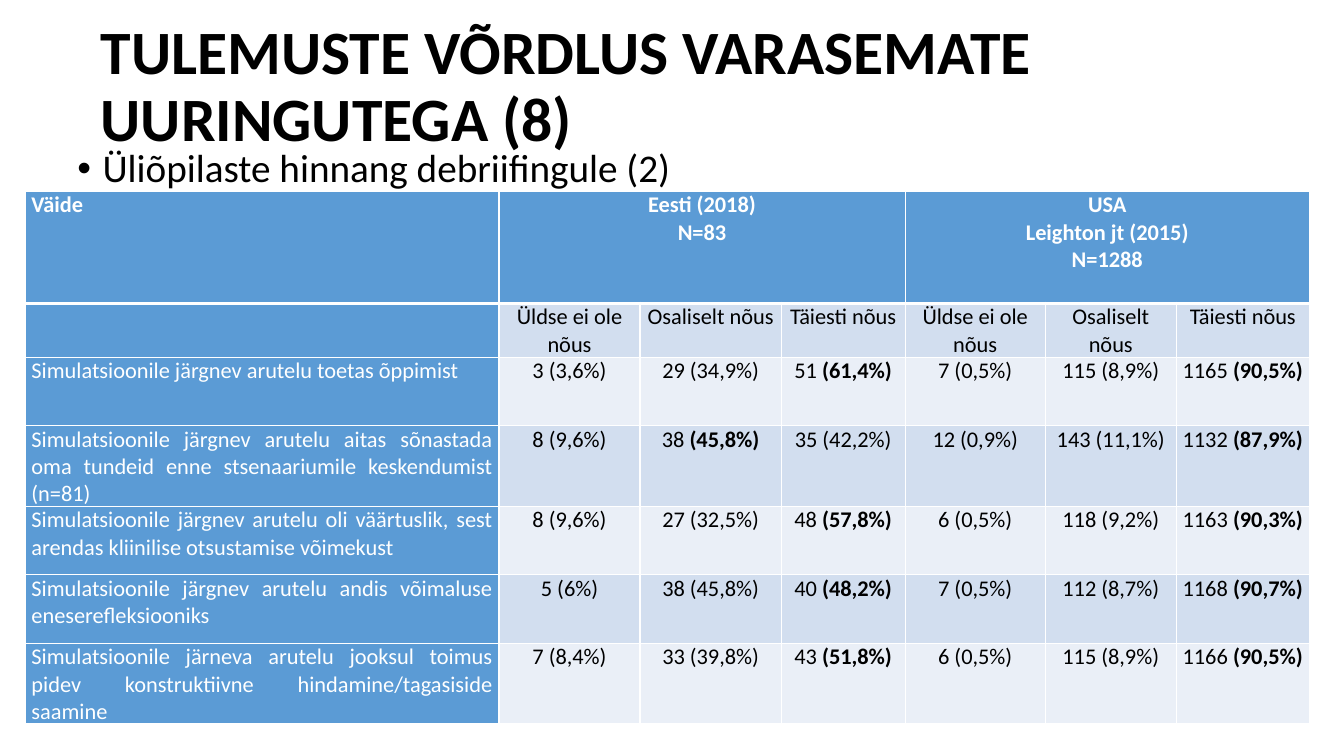
from lxml.etree import SubElement
from pptx import Presentation
from pptx.dml.color import RGBColor
from pptx.enum.text import MSO_ANCHOR, MSO_AUTO_SIZE, PP_ALIGN
from pptx.oxml.ns import qn
from pptx.util import Pt

COLORS = {"black": "000000", "white": "FFFFFF", "blue": "5B9BD5",
          "band": "D2DEEF", "pale": "EAEFF7"}
COLUMN_WIDTHS = [338.4, 100.8, 100.8, 88.56, 100.08, 93.6, 95.04]
ROW_HEIGHTS = [79.92, 32.4] + [48.96] * 5
GROUPS = {1: ["Eesti (2018)", "N=83"],
          4: ["USA", "Leighton jt (2015)", "N=1288"]}
ANSWERS = ["Üldse ei ole nõus", "Osaliselt nõus", "Täiesti nõus"]
STATEMENTS = [
    ["Simulatsioonile järgnev arutelu toetas õppimist",
     "3 (3,6%)", "29 (34,9%)", "51 |(61,4%)",
     "7 (0,5%)", "115 (8,9%)", "1165 |(90,5%)"],
    ["Simulatsioonile järgnev arutelu aitas sõnastada oma tundeid enne "
     "stsenaariumile keskendumist (n=81)",
     "8 (9,6%)", "38 |(45,8%)", "35 (42,2%)",
     "12 (0,9%)", "143 (11,1%)", "1132 |(87,9%)"],
    ["Simulatsioonile järgnev arutelu oli väärtuslik, sest arendas "
     "kliinilise otsustamise võimekust",
     "8 (9,6%)", "27 (32,5%)", "48 |(57,8%)",
     "6 (0,5%)", "118 (9,2%)", "1163 |(90,3%)"],
    ["Simulatsioonile järgnev arutelu andis võimaluse eneserefleksiooniks",
     "5 (6%)", "38 (45,8%)", "40 |(48,2%)",
     "7 (0,5%)", "112 (8,7%)", "1168 |(90,7%)"],
    ["Simulatsioonile järneva arutelu jooksul toimus pidev konstruktiivne "
     "hindamine/tagasiside saamine",
     "7 (8,4%)", "33 (39,8%)", "43 |(51,8%)",
     "6 (0,5%)", "115 (8,9%)", "1166 |(90,5%)"],
]


def add_span(para, text, size, color="black", bold=False):
    """Add one formatted run to a paragraph."""
    span = para.add_run()
    span.text = text
    span.font.name = "Calibri"
    span.font.size = Pt(size)
    span.font.bold = bold
    span.font.color.rgb = RGBColor.from_string(COLORS[color])


def add_title(page, text):
    """Place and format the title placeholder."""
    title = page.shapes.title
    title.left, title.top, title.width, title.height = Pt(64.8), Pt(10.8), Pt(828), Pt(104.4)
    frame = title.text_frame
    frame.auto_size = MSO_AUTO_SIZE.NONE
    frame.vertical_anchor = MSO_ANCHOR.MIDDLE
    para = frame.paragraphs[0]
    para.alignment = PP_ALIGN.LEFT
    para.line_spacing = 0.9
    add_span(para, text, 44, bold=True)


def add_bullet(page, text):
    """Add the bulleted line under the title."""
    box = page.shapes.add_textbox(Pt(48.24), Pt(102.96), Pt(828), Pt(342.72))
    box.text_frame.word_wrap = True
    para = box.text_frame.paragraphs[0]
    para.line_spacing = 0.9
    add_span(para, text, 28)
    properties = para._p.get_or_add_pPr()
    properties.set("marL", str(Pt(18)))
    properties.set("indent", str(-Pt(18)))
    SubElement(properties, qn("a:buFont"), typeface="Arial")
    SubElement(properties, qn("a:buChar"), char="•")


def style_cell(cell, fill, top=1, bottom=1):
    """Set the white borders and the fill of a cell."""
    properties = cell._tc.get_or_add_tcPr()
    for side, width in (("L", 1), ("R", 1), ("T", top), ("B", bottom)):
        line = SubElement(properties, qn(f"a:ln{side}"), w=str(Pt(width)))
        paint = SubElement(line, qn("a:solidFill"))
        SubElement(paint, qn("a:srgbClr"), val=COLORS["white"])
    cell.fill.solid()
    cell.fill.fore_color.rgb = RGBColor.from_string(COLORS[fill])


def write_cell(cell, lines, color, alignment=PP_ALIGN.CENTER, bold=False):
    """Write lines into a cell; the part after a bar is bold."""
    cell.margin_left = cell.margin_right = Pt(4.5)
    cell.margin_top = cell.margin_bottom = Pt(0)
    frame = cell.text_frame
    for index, text in enumerate(lines):
        para = frame.add_paragraph() if index else frame.paragraphs[0]
        para.alignment = alignment
        for part, piece in enumerate(text.split("|")):
            add_span(para, piece, 16, color, bold or part > 0)


def add_results(page):
    """Add the table that compares the two studies."""
    frame = page.shapes.add_table(len(ROW_HEIGHTS), len(COLUMN_WIDTHS), Pt(18), Pt(136.8),
                                  Pt(sum(COLUMN_WIDTHS)), Pt(sum(ROW_HEIGHTS)))
    table = frame.table
    table.first_row = table.horz_banding = False
    for column, width in zip(table.columns, COLUMN_WIDTHS):
        column.width = Pt(width)
    for index, (row, height) in enumerate(zip(table.rows, ROW_HEIGHTS)):
        row.height = Pt(height)
        for number, cell in enumerate(row.cells):
            band = "band" if index % 2 else "pale"
            style_cell(cell, "blue" if index == 0 or number == 0 else band,
                       top=3 if index == 1 else 1, bottom=3 if index == 0 else 1)

    write_cell(table.cell(0, 0), ["Väide"], "white", PP_ALIGN.JUSTIFY, bold=True)
    for start, lines in GROUPS.items():
        table.cell(0, start).merge(table.cell(0, start + 2))
        write_cell(table.cell(0, start), lines, "white", bold=True)
    for number, answer in enumerate(ANSWERS * 2, 1):
        write_cell(table.cell(1, number), [answer], "black")
    for index, (statement, *values) in enumerate(STATEMENTS, 2):
        write_cell(table.cell(index, 0), [statement], "white", PP_ALIGN.JUSTIFY)
        for number, value in enumerate(values, 1):
            write_cell(table.cell(index, number), [value], "black")


def main():
    """Build the slide and save the deck."""
    deck = Presentation()
    deck.slide_width, deck.slide_height = Pt(960), Pt(540)
    page = deck.slides.add_slide(deck.slide_layouts[5])
    add_title(page, "TULEMUSTE VÕRDLUS VARASEMATE UURINGUTEGA (8)")
    add_bullet(page, "Üliõpilaste hinnang debriifingule (2)")
    add_results(page)
    deck.save("out.pptx")


if __name__ == "__main__":
    main()
